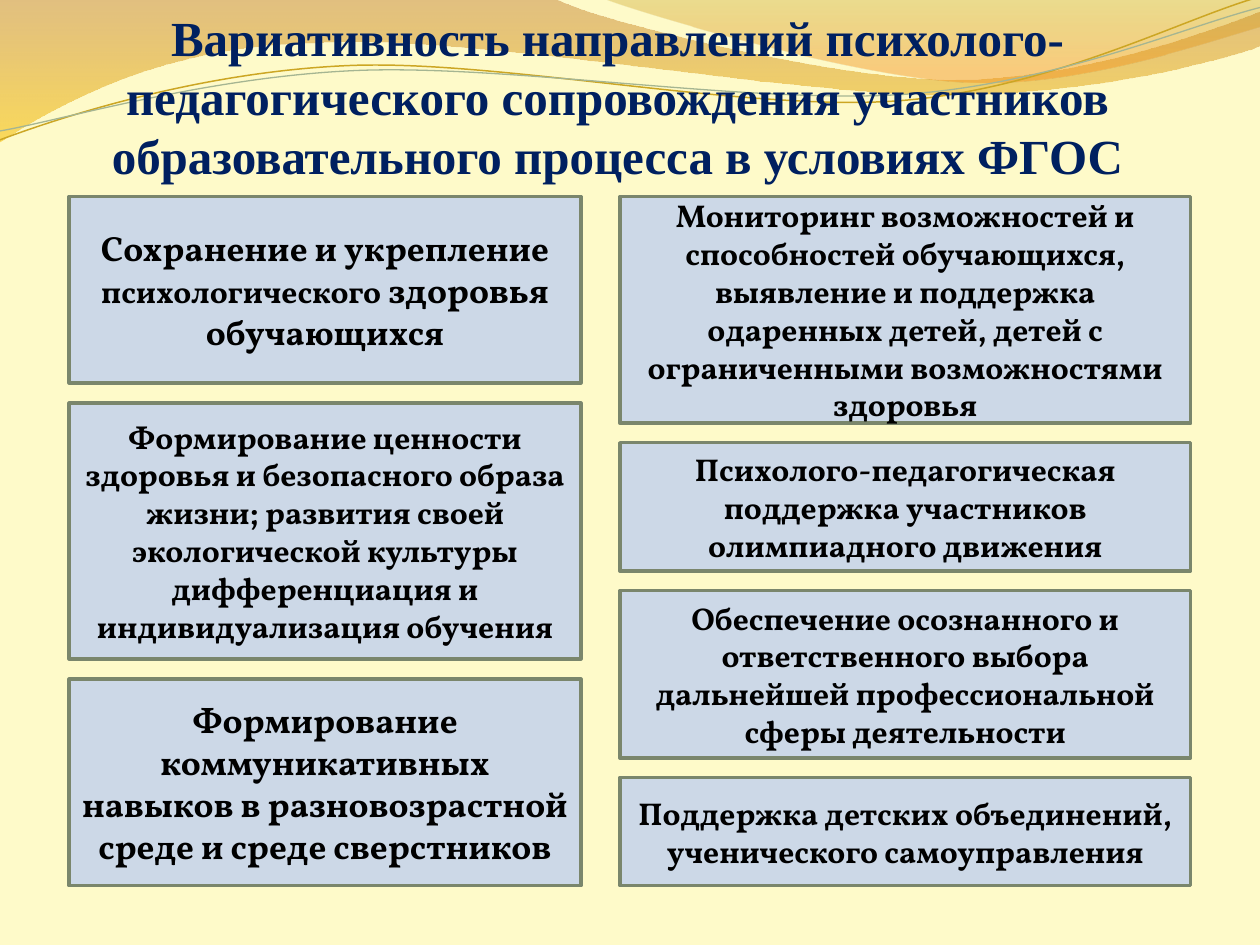
from math import cos, radians, sin

from lxml.etree import SubElement
from pptx import Presentation
from pptx.dml.color import RGBColor
from pptx.enum.shapes import MSO_SHAPE
from pptx.enum.text import MSO_ANCHOR, PP_ALIGN
from pptx.oxml.ns import qn
from pptx.util import Inches, Pt

COLORS = {
    "background": "FEFAC9", "title": "002060", "text": "000000",
    "box": "CCD8E7", "border": "7A866C", "gold": "CCA624", "sage": "A5B592",
    "brown": "C07A28", "yellow": "F7BF00", "ochre": "C09709", "orange": "F59320",
}


def rgb(name):
    return RGBColor.from_string(COLORS[name])


def write(sp, runs, font="Vollkorn", color="text", anchor=MSO_ANCHOR.MIDDLE, after=None):
    tf = sp.text_frame
    tf.word_wrap = True
    tf.vertical_anchor = anchor
    p = tf.paragraphs[0]
    p.alignment = PP_ALIGN.CENTER
    if after is not None:
        p.space_after = Pt(after)
    for text, size in runs:
        r = p.add_run()
        r.text = text
        r.font.name = font
        r.font.size = Pt(size)
        r.font.bold = True
        r.font.color.rgb = rgb(color)


prs = Presentation()
prs.slide_width, prs.slide_height = Inches(10), Inches(7.5)
s = prs.slides.add_slide(prs.slide_layouts[6])
s.background.fill.solid()
s.background.fill.fore_color.rgb = rgb("background")

bands = [
    ([[(0, -0.01)], [(4.4, -0.01)],
      [(4.76, 0.17), (6.64, 0.63), (7.58, 0.63)],
      [(8.53, 0.63), (9.58, 0.26), (10, 0.09)], [(10.01, 0.36)],
      [(9.83, 0.44), (8.7, 0.76), (7.46, 0.75)],
      [(6.22, 0.75), (3.82, 0.28), (2.57, 0.34)],
      [(1.29, 0.35), (0.46, 0.83), (-0.01, 1.13)]],
     [(0, "brown", 45), (1, "yellow", 55)]),
    ([[(4.79, -0.01)],
      [(5.09, 0.11), (6.82, 0.62), (7.69, 0.65)],
      [(8.56, 0.69), (9.61, 0.32), (10, 0.21)], [(10, 0)]],
     [(0, "ochre", 30), (0.8, "orange", 45)]),
]
lines = [
    ([[(0, 1.11)],
      [(0.48, 0.93), (1.58, 0.57), (2.77, 0.52)],
      [(3.95, 0.47), (5.93, 0.89), (7.13, 0.8)],
      [(8.33, 0.71), (9.38, 0.15), (9.98, -0.02)]],
     "gold", 0.85, (4.99, 0.58)),
    ([[(0, 1.04)],
      [(0.47, 0.96), (1.64, 0.61), (2.83, 0.56)],
      [(4.03, 0.51), (5.97, 0.83), (7.17, 0.75)],
      [(8.36, 0.67), (9.41, 0.21), (10, 0.06)]],
     "sage", 0.75, (5, 0.59)),
]
tilt = 2.7
turn_cos, turn_sin = cos(radians(tilt)), sin(radians(tilt))
waves = [(segments, stops, None) for segments, stops in bands]
for segments, color, width, (cx, cy) in lines:
    level = [[(cx + (x - cx) * turn_cos - (y - cy) * turn_sin,
               cy + (x - cx) * turn_sin + (y - cy) * turn_cos) for x, y in segment]
             for segment in segments]
    waves.append((level, None, (color, width)))

for segments, stops, line in waves:
    vertices = [(Inches(x), Inches(y)) for segment in segments for x, y in segment]
    builder = s.shapes.build_freeform(*vertices[0])
    builder.add_line_segments(vertices[1:], close=stops is not None)
    sp = builder.convert_to_shape()
    steps = iter(sp.element.spPr.findall(".//" + qn("a:lnTo")))
    for segment in segments[1:]:
        step = next(steps)
        if len(segment) == 3:
            step.tag = qn("a:cubicBezTo")
            for _ in range(2):
                extra = next(steps)
                step.append(extra[0])
                extra.getparent().remove(extra)
    sp.shadow.inherit = False
    if stops:
        sp.line.fill.background()
        sp.fill.gradient()
        sp.fill.gradient_angle = 270
        for stop, (position, color, _) in zip(sp.fill.gradient_stops, stops):
            stop.position = position
            stop.color.rgb = rgb(color)
        colors = sp.element.spPr.findall(".//" + qn("a:srgbClr"))
        for element, (_, _, opacity) in zip(colors, stops):
            SubElement(element, qn("a:alpha")).set("val", str(opacity * 1000))
    else:
        sp.rotation = 360 - tilt
        sp.fill.background()
        sp.line.color.rgb = rgb(line[0])
        sp.line.width = Pt(line[1])

title = s.shapes.add_textbox(Inches(0), Inches(0.21), Inches(9.8), Inches(1.25))
tf = title.text_frame
tf.margin_left = tf.margin_right = tf.margin_bottom = 0
write(title, [("Вариативность направлений психолого-педагогического сопровождения "
               "участников образовательного процесса в условиях ФГОС", 28)],
      font="Times New Roman", color="title", anchor=MSO_ANCHOR.BOTTOM)

top, bottom = 1.56, 7.03
columns = [
    (0.55, 4.06, [
        (1.48, [("Сохранение и укрепление ", 20), ("психологического", 18),
                (" здоровья обучающихся", 20)], None),
        (2.03, [("Формирование ценности здоровья и безопасного образа жизни; "
                 "развития своей экологической культуры дифференциация и "
                 "индивидуализация обучения", 18)], None),
        (1.64, [("Формирование коммуникативных навыков в разновозрастной среде "
                 "и среде сверстников", 20)], None),
    ]),
    (4.92, 4.53, [
        (1.8, [("Мониторинг возможностей и способностей обучающихся, выявление и "
                "поддержка одаренных детей, детей с ограниченными возможностями "
                "здоровья", 18)], None),
        (1.02, [("Психолого-педагогическая поддержка участников олимпиадного "
                 "движения", 18)], None),
        (1.33, [("Обеспечение осознанного и ответственного выбора дальнейшей "
                 "профессиональной сферы деятельности", 18)], None),
        (0.86, [("Поддержка детских объединений, ученического самоуправления", 18)], 10),
    ]),
]
for left, width, boxes in columns:
    gap = (bottom - top - sum(box[0] for box in boxes)) / (len(boxes) - 1)
    y = top
    for height, runs, after in boxes:
        sp = s.shapes.add_shape(MSO_SHAPE.RECTANGLE, Inches(left), Inches(y),
                                Inches(width), Inches(height))
        sp.shadow.inherit = False
        sp.fill.solid()
        sp.fill.fore_color.rgb = rgb("box")
        sp.line.color.rgb = rgb("border")
        sp.line.width = Pt(2)
        write(sp, runs, after=after)
        y += height + gap

prs.save("out.pptx")
